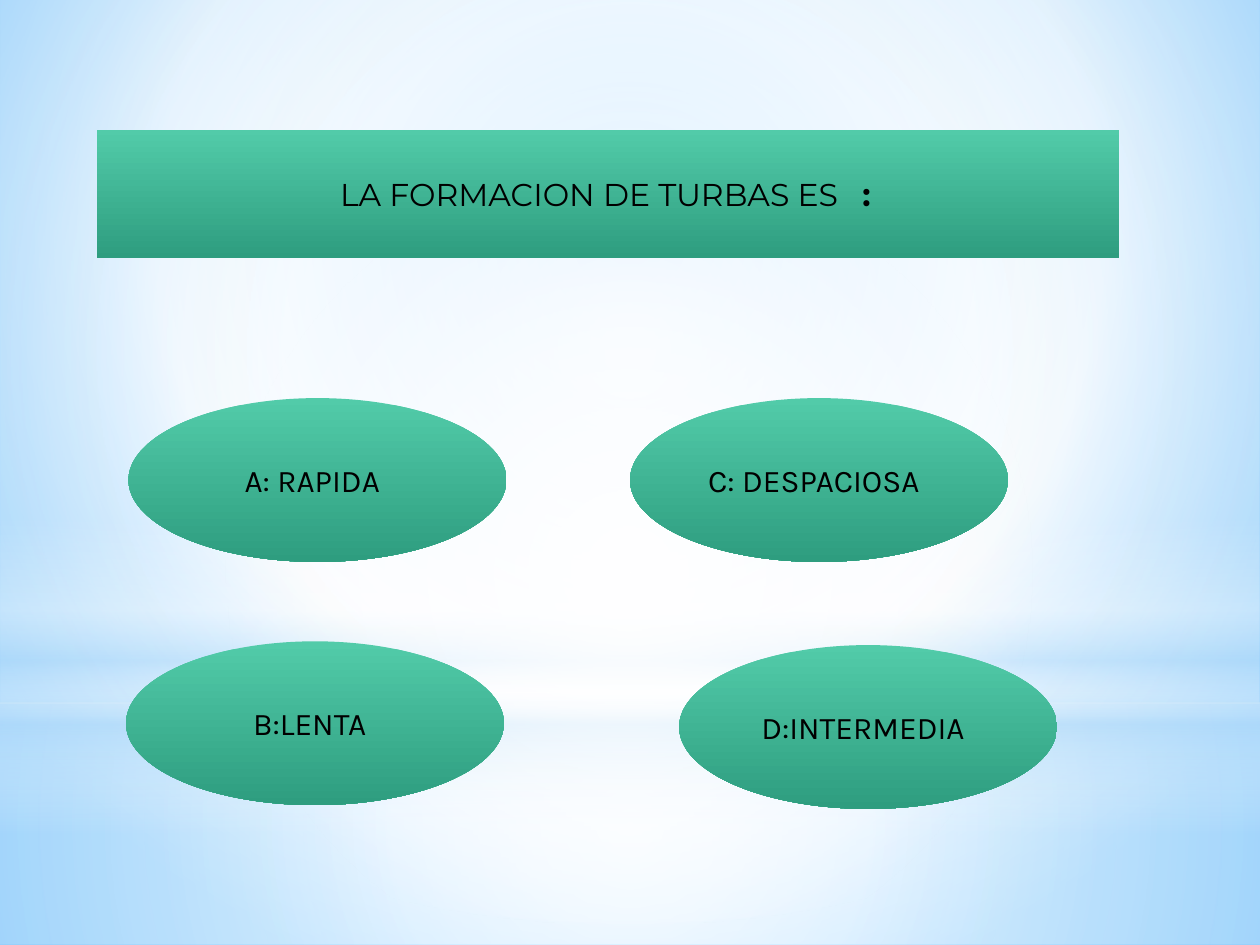
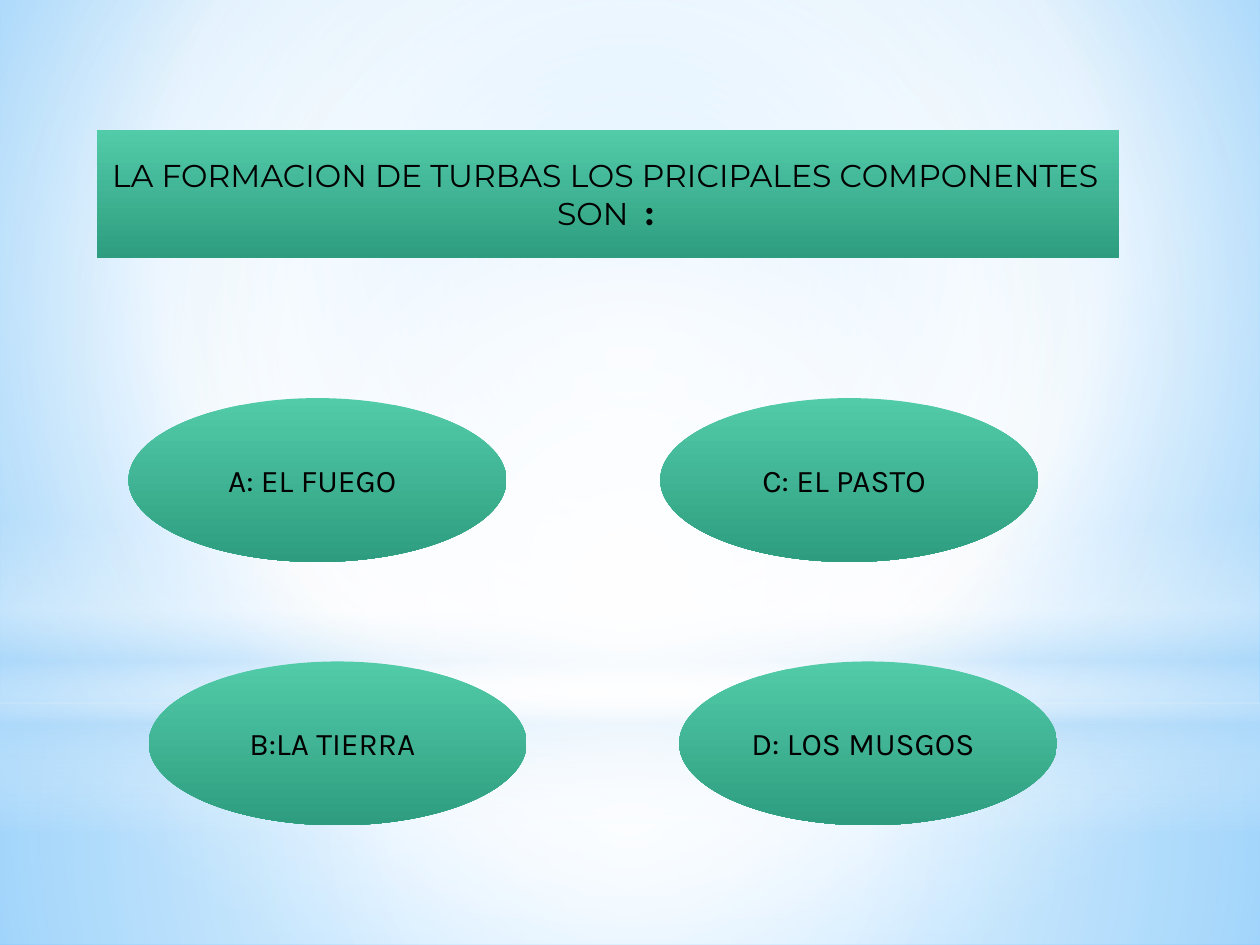
from dataclasses import dataclass

from lxml.etree import SubElement
from pptx import Presentation
from pptx.dml.color import RGBColor
from pptx.enum.shapes import MSO_SHAPE
from pptx.enum.text import MSO_ANCHOR, PP_ALIGN
from pptx.oxml.ns import qn
from pptx.util import Inches, Pt


@dataclass(frozen=True)
class Theme:
    ink: str = "000000"
    white: str = "FFFFFF"
    haze: str = "B4DCFA"
    sky: str = "9ED5FF"
    deep: str = "5BB9FF"
    mint: str = "52CBA9"
    pine: str = "2E9D7F"
    size: int = 18
    head: str = "Montserrat"
    body: str = "Karla"


CENTER = (50, 50, 50, 50)


class Deck:
    def __init__(self, theme):
        self.theme = theme
        self.prs = Presentation()
        self.prs.slide_width, self.prs.slide_height = Inches(10), Inches(7.5)
        self.slide = None

    def paint(self, fill, root, stops, focus=None):
        """Gradient of (place, colour, opacity); radial if focus is given, else downward."""
        fill.gradient()
        grad = root.find(".//" + qn("a:gradFill"))
        for child in list(grad):
            grad.remove(child)
        group = SubElement(grad, qn("a:gsLst"))
        for place, color, *alpha in stops:
            stop = SubElement(group, qn("a:gs"), pos=str(place * 1000))
            tone = SubElement(stop, qn("a:srgbClr"), val=color)
            if alpha:
                SubElement(tone, qn("a:alpha"), val=str(alpha[0] * 1000))
        if focus:
            way = SubElement(grad, qn("a:path"), path="circle")
            sides = {side: str(part * 1000) for side, part in zip("ltrb", focus)}
            SubElement(way, qn("a:fillToRect"), sides)
        else:
            SubElement(grad, qn("a:lin"), ang="5400000", scaled="0")

    def shape(self, kind, box, stops, focus=None):
        item = self.slide.shapes.add_shape(kind, *map(Inches, box))
        item.shadow.inherit = False
        item.line.fill.background()
        self.paint(item.fill, item.element, stops, focus)
        return item

    def start(self):
        """New slide with the shared sky backdrop."""
        t = self.theme
        self.slide = self.prs.slides.add_slide(self.prs.slide_layouts[6])
        self.paint(self.slide.background.fill, self.slide.element,
                   [(0, t.sky), (60, t.white), (100, t.deep)], (20, 10, 20, 60))
        rect, oval = MSO_SHAPE.RECTANGLE, MSO_SHAPE.OVAL
        self.shape(rect, (0, 5.58, 10, 1.92),
                   [(0, t.white, 91), (37, t.white, 76), (100, t.haze, 79)], CENTER)
        self.shape(rect, (0, 0, 10, 5.58),
                   [(0, t.white, 89), (48, t.white, 62), (100, t.haze, 79)], CENTER)
        self.shape(rect, (0, 4.12, 10, 2.5),
                   [(0, t.white, 0), (29, t.white, 30), (45, t.haze, 40),
                    (55, t.white, 26), (65, t.haze, 60), (100, t.white, 0)])
        self.shape(oval, (0, 1.75, 10, 5.58),
                   [(0, t.white), (56, t.white, 0)], CENTER)

    def label(self, kind, box, text, face, inset):
        """Green shape with centred text; returns its paragraph."""
        t = self.theme
        item = self.shape(kind, box, [(0, t.mint), (100, t.pine)])
        frame = item.text_frame
        frame.word_wrap = True
        frame.vertical_anchor = MSO_ANCHOR.MIDDLE
        frame.margin_right = Inches(inset)
        para = frame.paragraphs[0]
        para.alignment = PP_ALIGN.CENTER
        para.add_run().text = text
        para.font.name, para.font.size = face, Pt(t.size)
        para.font.color.rgb = RGBColor.from_string(t.ink)
        return para

    def title(self, text, gap):
        """Question band; gap is the extra space in points before the colon."""
        para = self.label(MSO_SHAPE.RECTANGLE, (0.77, 1.03, 8.11, 1.02),
                          text, self.theme.head, 0.14)
        space = para.add_run()
        space.text = " "
        space.font._element.set("spc", str(gap * 100))
        colon = para.add_run()
        colon.text = ":"
        colon.font.bold = True

    def answer(self, left, top, text):
        self.label(MSO_SHAPE.OVAL, (left, top, 3, 1.3), text, self.theme.body, 0.18)


# Each question: text, gap before the colon, answers as (left, top, text)
QUIZ = [
    ("LA FORMACION DE TURBAS ES", 9, [
        (1.02, 3.16, "A: RAPIDA"),
        (1, 5.09, "B:LENTA"),
        (5.39, 5.12, "D:INTERMEDIA"),
        (5, 3.16, "C: DESPACIOSA")]),
    ("LA FORMACION DE TURBAS LOS PRICIPALES COMPONENTES SON", 5, [
        (1.02, 3.16, "A: EL FUEGO"),
        (1.18, 5.25, "B:LA TIERRA"),
        (5.39, 5.25, "D: LOS MUSGOS"),
        (5.24, 3.16, "C: EL PASTO")]),
]


def main():
    deck = Deck(Theme())
    for text, gap, answers in QUIZ:
        deck.start()
        deck.title(text, gap)
        for answer in answers:
            deck.answer(*answer)
    deck.prs.save("out.pptx")


if __name__ == "__main__":
    main()
